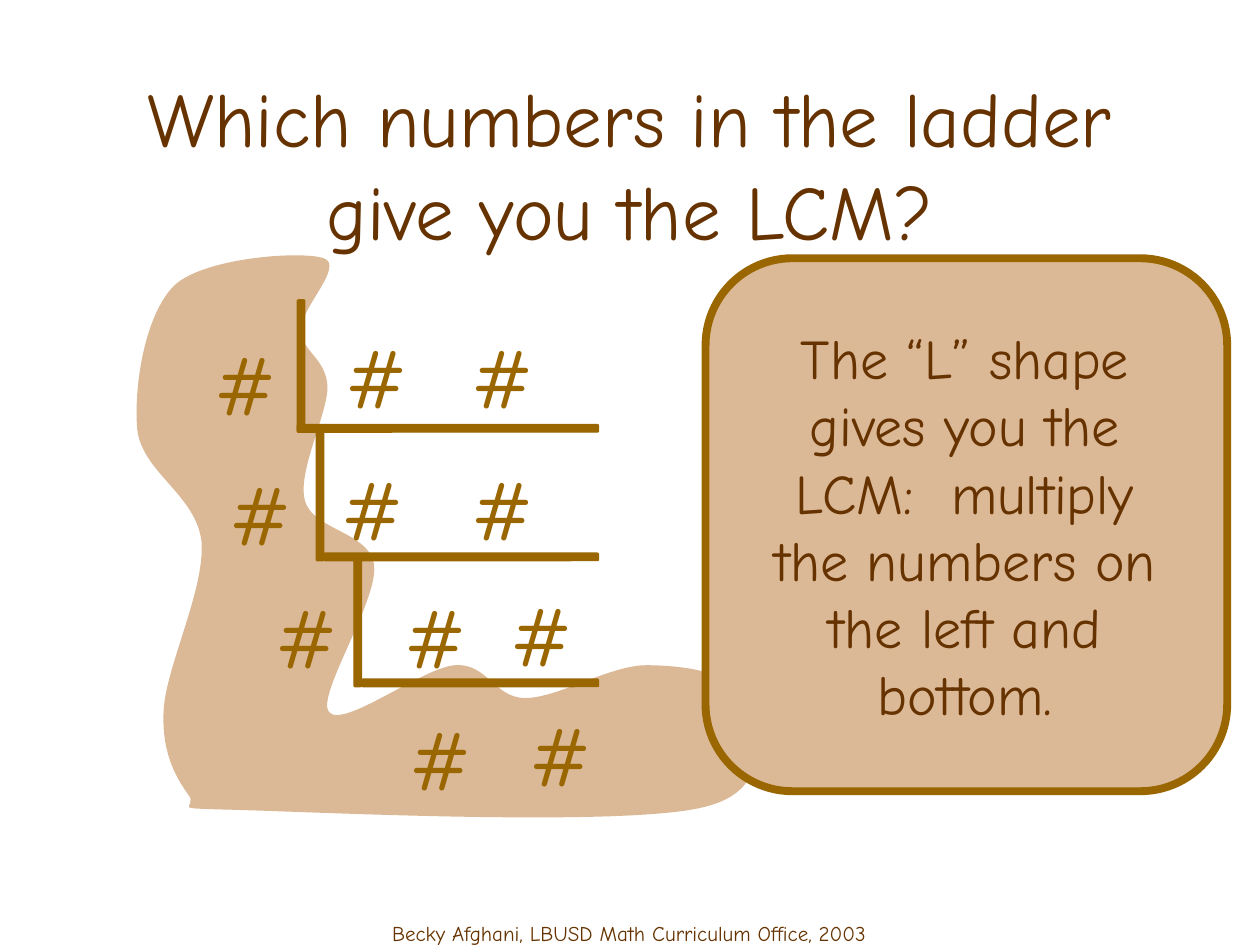
from dataclasses import dataclass

from lxml import etree
from pptx import Presentation
from pptx import util as u
from pptx.dml.color import RGBColor
from pptx.enum import shapes, text
from pptx.oxml import ns


@dataclass(frozen=True)
class Theme:
    font: str = "Comic Neue"
    ink: str = "663300"
    bar: str = "996600"
    tan: str = "DCB996"
    title_size: int = 44
    mark_size: int = 48
    panel_size: int = 32
    credit_size: int = 12
    thin: float = 0.75
    thick: float = 4.5


THEME = Theme()

BAR = 0.06
POST_HEIGHT = 1.05
RUNG_END = 4.75
# Left and top of each post, left of the rung at its foot
STEPS = [(2.36, 2.38, 2.36), (2.51, 3.4, 2.57), (2.81, 4.4, 2.87)]

MARK_HEIGHT = 0.68
# Left, top and width of each number mark, row by row down the ladder
MARKS = [
    (1.64, 2.58, 0.61), (2.68, 2.53, 0.61), (3.66, 2.53, 0.65),
    (1.79, 3.61, 0.56), (2.68, 3.57, 0.56), (3.66, 3.57, 0.65),
    (2.15, 4.59, 0.56), (3.18, 4.59, 0.56), (3.97, 4.57, 0.65),
    (3.22, 5.56, 0.56), (4.17, 5.53, 0.56),
]

# The "L" outline: a start point, then two controls and an end per curve
L_START = (1.39, 2.26)
L_CURVES = [
    ((1.15, 2.49), (1.06, 3.07), (1.09, 3.41)),
    ((1.13, 3.75), (1.56, 3.93), (1.6, 4.3)),
    ((1.63, 4.67), (1.32, 5.29), (1.3, 5.63)),
    ((1.28, 5.96), (1.39, 6.16), (1.49, 6.3)),
    ((1.6, 6.43), (1.26, 6.41), (1.94, 6.43)),
    ((2.62, 6.45), (4.92, 6.56), (5.57, 6.41)),
    ((6.23, 6.26), (5.94, 5.71), (5.87, 5.52)),
    ((5.8, 5.33), (5.41, 5.28), (5.13, 5.28)),
    ((4.84, 5.28), (4.43, 5.54), (4.17, 5.54)),
    ((3.92, 5.54), (3.87, 5.26), (3.61, 5.28)),
    ((3.35, 5.3), (2.72, 5.79), (2.61, 5.65)),
    ((2.51, 5.52), (3, 4.77), (2.97, 4.49)),
    ((2.94, 4.22), (2.48, 4.21), (2.42, 3.97)),
    ((2.36, 3.74), (2.6, 3.29), (2.6, 3.07)),
    ((2.59, 2.84), (2.39, 2.79), (2.39, 2.62)),
    ((2.38, 2.45), (2.74, 2.11), (2.57, 2.05)),
    ((2.4, 1.99), (1.64, 2.04), (1.39, 2.26)),
]


def rgb(value):
    return RGBColor.from_string(value)


def inches(values):
    return [u.Inches(v) for v in values]


def paint(sp, fill, line=None, width=THEME.thin):
    sp.shadow.inherit = False
    sp.fill.solid()
    sp.fill.fore_color.rgb = rgb(fill)
    if line:
        sp.line.color.rgb = rgb(line)
        sp.line.width = u.Pt(width)
    else:
        sp.line.fill.background()


def curve_segments(sp):
    """Turn each three line segments of a freeform into one cubic curve."""
    lines = list(sp._element.iter(ns.qn("a:lnTo")))
    for i in range(0, len(lines), 3):
        curve = etree.Element(ns.qn("a:cubicBezTo"))
        lines[i].addprevious(curve)
        for line in lines[i:i + 3]:
            curve.append(line[0])
            line.getparent().remove(line)


def add_l_shape(container):
    builder = container.build_freeform(*inches(L_START))
    builder.add_line_segments(
        [inches(point) for curve in L_CURVES for point in curve], close=True)
    sp = builder.convert_to_shape()
    curve_segments(sp)
    paint(sp, THEME.tan)


def add_round_rect(container, box, fill, line, width=THEME.thin):
    sp = container.add_shape(shapes.MSO_SHAPE.ROUNDED_RECTANGLE, *inches(box))
    paint(sp, fill, line, width)


def add_text(container, box, words, size, color=THEME.ink, wrap=True,
             anchor=text.MSO_ANCHOR.TOP):
    tf = container.add_textbox(*inches(box)).text_frame
    tf.word_wrap = wrap
    tf.vertical_anchor = anchor
    if not wrap:
        tf.margin_left = tf.margin_right = 0
    p = tf.paragraphs[0]
    p.alignment = text.PP_ALIGN.CENTER
    r = p.add_run()
    r.text = words
    p.font.name = THEME.font
    p.font.size = u.Pt(size)
    p.font.color.rgb = rgb(color)
    return r


def outline_run(r, color, width):
    ln = etree.Element(ns.qn("a:ln"), w=str(u.Pt(width)))
    fill = etree.SubElement(ln, ns.qn("a:solidFill"))
    etree.SubElement(fill, ns.qn("a:srgbClr"), val=color)
    r._r.get_or_add_rPr().insert(0, ln)


def add_ladder(container):
    for post_left, top, rung_left in STEPS:
        rung_top = top + POST_HEIGHT - BAR
        for box in ((post_left, top, BAR, POST_HEIGHT),
                    (rung_left, rung_top, RUNG_END - rung_left, BAR)):
            add_round_rect(container, box, THEME.bar, THEME.bar)
    for left, top, width in MARKS:
        r = add_text(container, (left, top, width, MARK_HEIGHT), "#",
                     THEME.mark_size, THEME.bar, wrap=False)
        outline_run(r, THEME.ink, THEME.thin)


def add_panel(container):
    group = container.add_group_shape().shapes
    add_round_rect(group, (5.6, 2.05, 4.14, 4.23), THEME.tan, THEME.bar, THEME.thick)
    add_text(group, (5.91, 2.52, 3.5, 3.3),
             "The “L” shape gives you the LCM:  multiply the numbers "
             "on the left and bottom.", THEME.panel_size)


def main():
    prs = Presentation()
    prs.slide_width, prs.slide_height = u.Inches(10), u.Inches(7.5)
    s = prs.slides.add_slide(prs.slide_layouts[6])
    add_text(s.shapes, (0.78, 7.26, 8.43, 0.5),
             "Becky Afghani, LBUSD Math Curriculum Office, 2003", THEME.credit_size)
    add_l_shape(s.shapes)
    add_text(s.shapes, (0.75, 0.67, 8.5, 1.25),
             "Which numbers in the ladder give you the LCM?",
             THEME.title_size, anchor=text.MSO_ANCHOR.MIDDLE)
    add_ladder(s.shapes)
    add_panel(s.shapes)
    prs.save("out.pptx")


if __name__ == "__main__":
    main()
